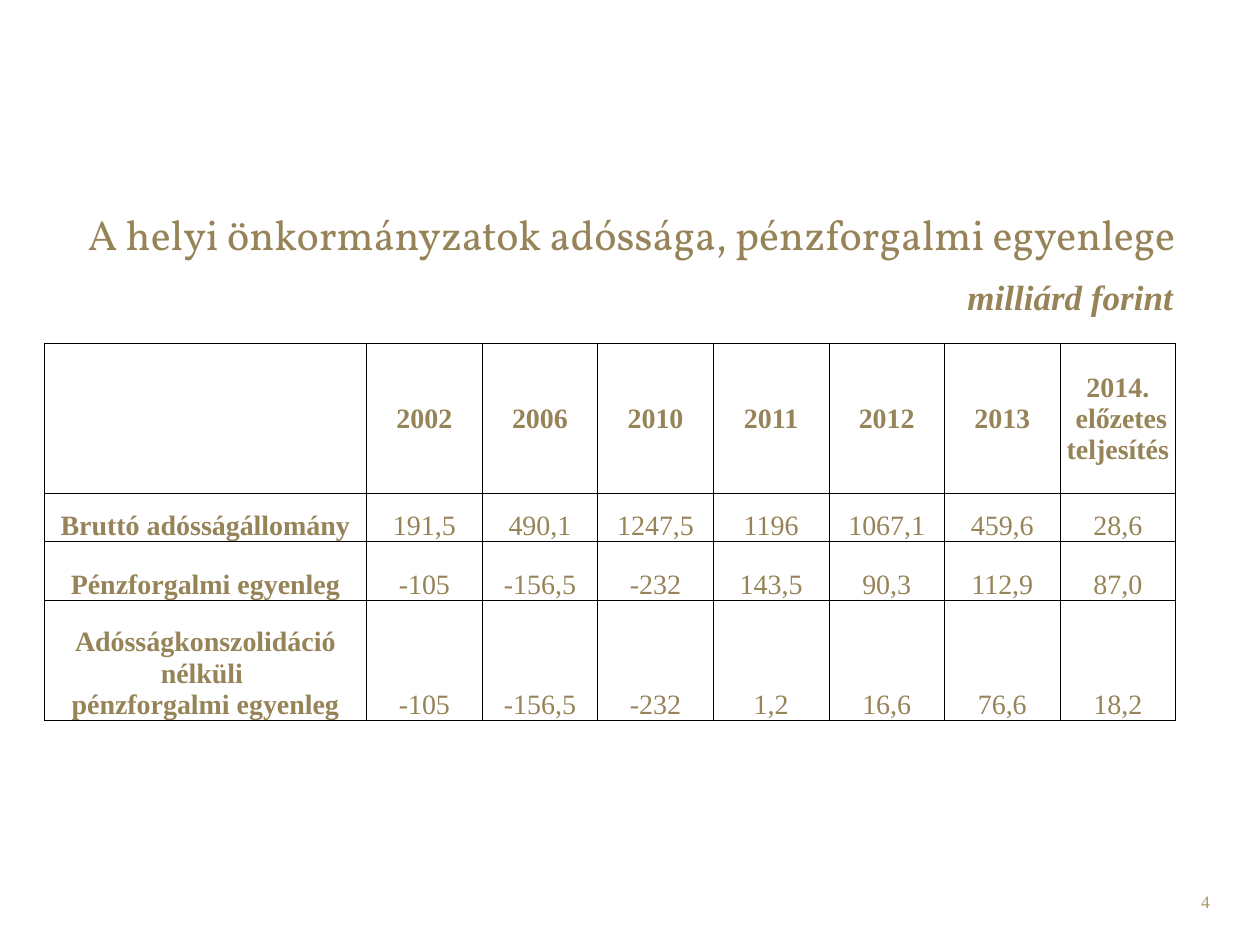
from pptx import Presentation
from pptx.enum.text import MSO_ANCHOR, PP_ALIGN
from pptx.dml.color import RGBColor
from pptx.oxml import parse_xml
from pptx.oxml.ns import nsdecls
from pptx.util import Cm, Pt

COLORS = {"text": "968458", "page": "A69765", "rule": "000000"}
SERIF = "Times New Roman"
HEADS = ["", "2002", "2006", "2010", "2011", "2012", "2013",
         "2014.\n előzetes teljesítés"]
ROWS = [
    ["Bruttó adósságállomány",
     "191,5", "490,1", "1247,5", "1196", "1067,1", "459,6", "28,6"],
    ["Pénzforgalmi egyenleg",
     "-105", "-156,5", "-232", "143,5", "90,3", "112,9", "87,0"],
    ["Adósságkonszolidáció nélküli \npénzforgalmi egyenleg",
     "-105", "-156,5", "-232", "1,2", "16,6", "76,6", "18,2"],
]


def write(frame, text, size, face=SERIF, color="text", bold=False,
          italic=False, align=PP_ALIGN.CENTER):
    """Fill the first paragraph, with a line break at each newline."""
    para = frame.paragraphs[0]
    para.alignment = align
    for i, line in enumerate(text.split("\n")):
        if i:
            para.add_line_break()
        run = para.add_run()
        run.text = line
        font = run.font
        font.name, font.size = face, Pt(size)
        font.bold, font.italic = bold, italic
        font.color.rgb = RGBColor.from_string(COLORS[color])


def add_label(slide, box, text, size, anchor=MSO_ANCHOR.TOP, **style):
    frame = slide.shapes.add_textbox(*map(Cm, box)).text_frame
    frame.word_wrap = True
    frame.vertical_anchor = anchor
    write(frame, text, size, **style)


def add_grid(slide, left, top, widths, heights):
    """Add a plain table with unfilled cells and no margins."""
    table = slide.shapes.add_table(
        len(heights), len(widths), Cm(left), Cm(top),
        Cm(sum(widths)), Cm(sum(heights))).table
    table.first_row = table.horz_banding = False
    for col, width in zip(table.columns, widths):
        col.width = Cm(width)
    for row, height in zip(table.rows, heights):
        row.height = Cm(height)
    for cell in table.iter_cells():
        cell.fill.background()
        cell.margin_left = cell.margin_right = 0
        cell.margin_top = cell.margin_bottom = 0
        cell.vertical_anchor = MSO_ANCHOR.BOTTOM
    return table


def rule_cell(cell):
    """Draw a thin line on all four sides."""
    props = cell._tc.get_or_add_tcPr()
    for i, side in enumerate("LRTB"):
        props.insert(i, parse_xml(
            f'<a:ln{side} {nsdecls("a")} w="{Pt(0.5)}"><a:solidFill>'
            f'<a:srgbClr val="{COLORS["rule"]}"/></a:solidFill></a:ln{side}>'))


def add_unit(slide, left, top, width, height):
    table = add_grid(slide, left, top, [width], [height])
    write(table.cell(0, 0).text_frame, "milliárd forint", 20,
          bold=True, italic=True)


def add_debts(slide, left, top):
    widths = [6.5] + [2.33] * (len(HEADS) - 1)
    table = add_grid(slide, left, top, widths, [3.02, 0.97, 1.19, 2.41])
    for r, row in enumerate([HEADS] + ROWS):
        for c, text in enumerate(row):
            cell = table.cell(r, c)
            rule_cell(cell)
            if r == 0:
                cell.vertical_anchor = MSO_ANCHOR.MIDDLE
            if text:
                write(cell.text_frame, text, 16, bold=r == 0 or c == 0)


def main():
    deck = Presentation()
    deck.slide_width, deck.slide_height = Cm(25.4), Cm(19.05)
    slide = deck.slides.add_slide(deck.slide_layouts[6])
    add_label(slide, (18.72, 17.83, 5.92, 1.02), "4", 10,
              color="page", align=PP_ALIGN.RIGHT)
    add_label(slide, (1.3, 3.12, 22.86, 3.18),
              "A helyi önkormányzatok adóssága, pénzforgalmi egyenlege", 24,
              anchor=MSO_ANCHOR.MIDDLE, face="Vollkorn")
    add_unit(slide, 18.97, 5.56, 5.21, 0.56)
    add_debts(slide, 0.89, 6.93)
    deck.save("out.pptx")


if __name__ == "__main__":
    main()
